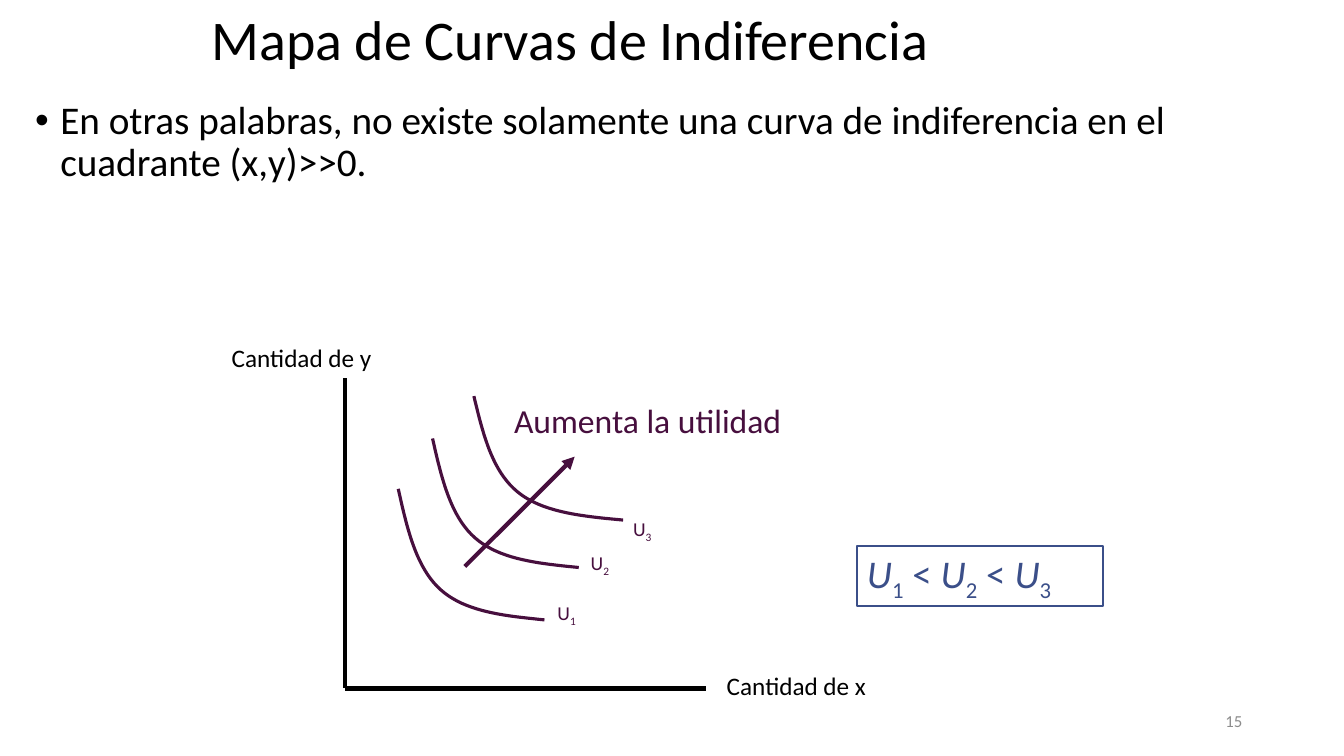
from lxml import etree
from pptx import Presentation
from pptx.dml.color import RGBColor
from pptx.enum.shapes import MSO_CONNECTOR, MSO_SHAPE
from pptx.enum.text import MSO_ANCHOR, PP_ALIGN
from pptx.oxml.ns import qn
from pptx.util import Pt

EMU_PER_PX = 9144
STRAIGHT = MSO_CONNECTOR.STRAIGHT
RECTANGLE = MSO_SHAPE.RECTANGLE
MIDDLE = MSO_ANCHOR.MIDDLE
TOP = MSO_ANCHOR.TOP
LEFT = PP_ALIGN.LEFT
RIGHT = PP_ALIGN.RIGHT

FONT = "Calibri"
BLACK = "000000"
GRAY = "8C8C8C"
PURPLE = "470F3E"
BLUE = "3B4F89"
CURVE_STEPS = 20
CURVE_SEGMENTS = [
    [(0, 0), (0.06, 0.3), (0.12, 0.6), (0.29, 0.77)],
    [(0.29, 0.77), (0.46, 0.94), (0.73, 0.97), (1, 1)],
]
CURVES = [
    ("1", (175, 150, 145, 130), (323, 258)),
    ("2", (209, 100, 145, 128), (356, 208)),
    ("3", (250, 58, 148, 123), (398, 175)),
]


def px(length):
    return round(length * EMU_PER_PX)


def color(hex_string):
    return RGBColor.from_string(hex_string)


def format_line(line, hex_string, width):
    line.color.rgb = color(hex_string)
    line.width = Pt(width)


def write_text(shape, runs, size, hex_string, align=LEFT, anchor=MIDDLE, wrap=True, spacing=1.0):
    frame = shape.text_frame
    for name, value in {"word_wrap": wrap, "vertical_anchor": anchor}.items():
        setattr(frame, name, value)
    paragraph = frame.paragraphs[0]
    for name, value in {"alignment": align, "line_spacing": spacing}.items():
        setattr(paragraph, name, value)
    for text, style in runs:
        run = paragraph.add_run()
        run.text = text
        font_values = {"name": FONT, "size": Pt(size), "italic": style == "italic"}
        for name, value in font_values.items():
            setattr(run.font, name, value)
        run.font.color.rgb = color(hex_string)
        if style == "subscript":
            run._r.get_or_add_rPr().set("baseline", "-25000")
    return paragraph


def add_text(slide, box, text, size, hex_string, **options):
    shape = slide.shapes.add_textbox(*map(px, box))
    runs = [(text, "plain")] if isinstance(text, str) else text
    return write_text(shape, runs, size, hex_string, **options)


def add_line(slide, start, end, hex_string, arrow=False):
    connector = slide.shapes.add_connector(STRAIGHT, *map(px, start + end))
    format_line(connector.line, hex_string, 3)
    if arrow:
        etree.SubElement(connector.line._get_or_add_ln(), qn("a:tailEnd"), type="triangle")
    etree.SubElement(connector._element.spPr, qn("a:effectLst"))


def bezier_point(controls, t):
    weights = ((1 - t) ** 3, 3 * t * (1 - t) ** 2, 3 * t ** 2 * (1 - t), t ** 3)
    return [sum(w * point[axis] for w, point in zip(weights, controls)) for axis in (0, 1)]


def add_curve(slide, box):
    left, top, width, height = box
    points = []
    for controls in CURVE_SEGMENTS:
        for step in range(1, CURVE_STEPS + 1):
            x, y = bezier_point(controls, step / CURVE_STEPS)
            points.append((px(left + x * width), px(top + y * height)))
    builder = slide.shapes.build_freeform(px(left), px(top))
    builder.add_line_segments(points, close=False)
    curve = builder.convert_to_shape()
    curve.shadow.inherit = False
    curve.fill.background()
    format_line(curve.line, PURPLE, 2.25)


def add_heading(slide, box):
    left, top, width, height = box
    add_text(slide, (left + 200, top - 1, 933, 85), "Mapa de Curvas de Indiferencia",
             40, BLACK, spacing=0.9)
    body = add_text(
        slide, (left + 25, top + 95, width - 91, height - 95),
        "En otras palabras, no existe solamente una curva de indiferencia "
        "en el cuadrante (x,y)>>0.",
        28, BLACK, anchor=TOP, spacing=0.9)
    body.space_before = Pt(10)
    properties = body._p.get_or_add_pPr()
    for name, value in {"marL": px(25), "indent": px(-25)}.items():
        properties.set(name, str(value))
    etree.SubElement(properties, qn("a:buFont"), typeface="Arial")
    etree.SubElement(properties, qn("a:buChar"), char="•")


def add_utility_map(slide, box):
    left, top, width, height = box
    origin = (left + 122, top + height - 17)
    add_line(slide, (origin[0], top + 40), origin, BLACK)
    add_line(slide, origin, (left + 480, origin[1]), BLACK)
    add_text(slide, (left + 491, top + 325, 174, 40), "Cantidad de x", 18, BLACK, wrap=False)
    add_text(slide, (left, top, 174, 40), "Cantidad de y", 18, BLACK, wrap=False)
    for index, (x, y, curve_width, curve_height), (label_x, label_y) in CURVES:
        add_curve(slide, (left + x, top + y, curve_width, curve_height))
        add_text(slide, (left + label_x, top + label_y, 58, 33),
                 [("U", "plain"), (index, "subscript")], 14, PURPLE)
    add_line(slide, (left + 241, top + 227), (left + 350, top + 118), PURPLE, arrow=True)
    add_text(slide, (left + 280, top + 57, 304, 50), "Aumenta la utilidad",
             24, PURPLE, wrap=False)


def add_ranking(slide, box):
    shape = slide.shapes.add_shape(RECTANGLE, *map(px, box))
    shape.shadow.inherit = False
    shape.fill.background()
    format_line(shape.line, BLUE, 1.25)
    runs = []
    for index, _, _ in CURVES:
        if runs:
            runs.append((" < ", "plain"))
        runs += [("U", "italic"), (index, "subscript")]
    write_text(shape, runs, 28, BLUE)


def add_page_number(slide, box):
    add_text(slide, box, "15", 12, GRAY, align=RIGHT)


def main():
    presentation = Presentation()
    presentation.slide_width = px(1333)
    presentation.slide_height = px(750)
    slide = presentation.slides.add_slide(presentation.slide_layouts[6])
    add_page_number(slide, (942, 695, 300, 40))
    add_heading(slide, (0, 0, 1333, 266))
    add_utility_map(slide, (220, 335, 665, 365))
    add_ranking(slide, (850, 542, 244, 59))
    presentation.save("out.pptx")


if __name__ == "__main__":
    main()
